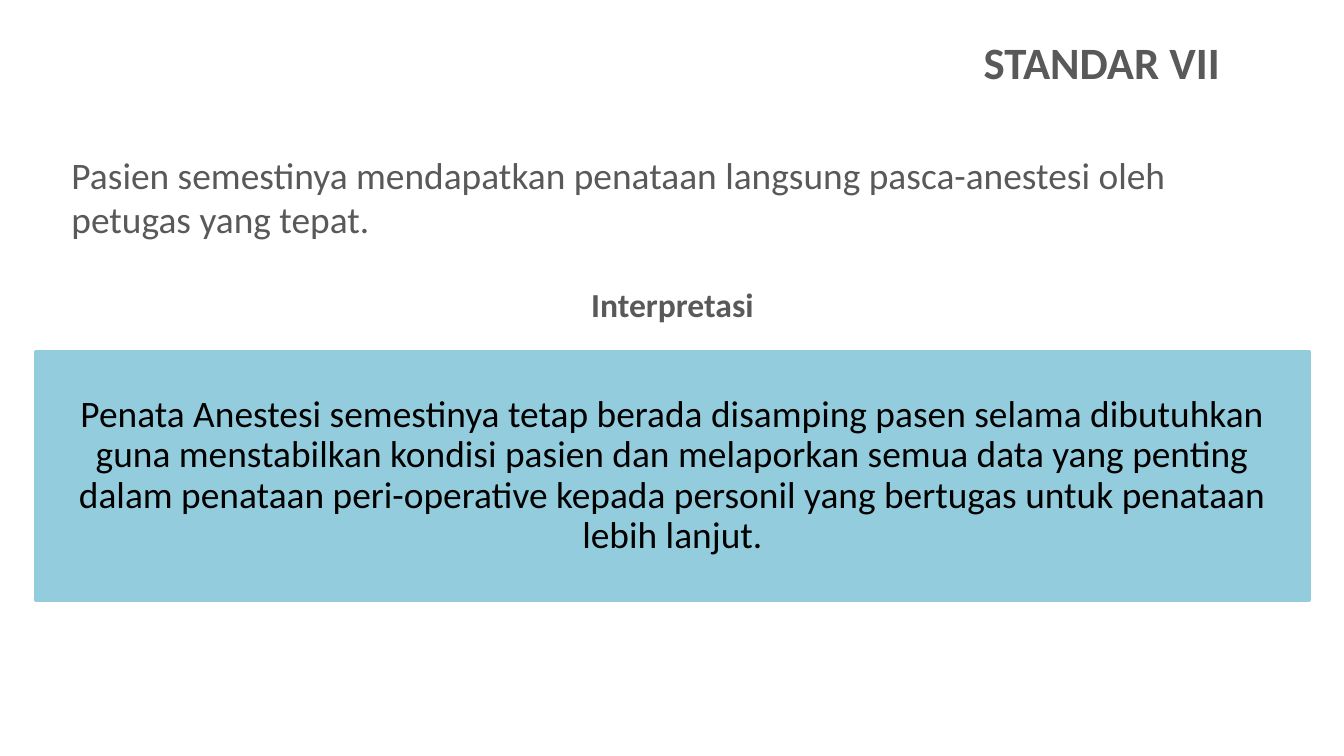
from dataclasses import dataclass

from lxml import etree
from pptx import Presentation
from pptx.dml.color import RGBColor
from pptx.enum.shapes import MSO_SHAPE
from pptx.enum.text import MSO_ANCHOR, MSO_AUTO_SIZE, PP_ALIGN
from pptx.oxml.ns import qn
from pptx.util import Pt

PX = 914400 / 134.4
RECT = MSO_SHAPE.RECTANGLE
TOP, MIDDLE = MSO_ANCHOR.TOP, MSO_ANCHOR.MIDDLE
LEFT, CENTER, RIGHT = PP_ALIGN.LEFT, PP_ALIGN.CENTER, PP_ALIGN.RIGHT
NO_FIT = MSO_AUTO_SIZE.NONE


def px(n):
    return round(n * PX)


@dataclass(frozen=True)
class Theme:
    font: str = "Calibri"
    grey: RGBColor = RGBColor(0x59, 0x59, 0x59)
    black: RGBColor = RGBColor(0, 0, 0)
    panel: RGBColor = RGBColor(0x93, 0xCD, 0xDD)
    heading: int = 24
    text: int = 20
    label: int = 18


class SlideBuilder:
    def __init__(self, slide, theme):
        self.slide = slide
        self.theme = theme

    def add_text(self, sp, text, size, color, align=LEFT, bold=False, anchor=TOP):
        tf = sp.text_frame
        tf.word_wrap = True
        tf.auto_size = NO_FIT
        tf.vertical_anchor = anchor
        p = tf.paragraphs[0]
        p.alignment = align
        p.space_before = Pt(0)
        r = p.add_run()
        r.text = text
        r.font.name = self.theme.font
        r.font.size = Pt(size)
        r.font.bold = bold
        r.font.color.rgb = color
        return p

    def place(self, sp, box):
        sp.left, sp.top, sp.width, sp.height = map(px, box)

    def title(self, box, text):
        sp = self.slide.shapes.title
        self.place(sp, box)
        self.add_text(sp, text, self.theme.text, self.theme.grey)

    def body(self, box, text):
        sp = self.slide.placeholders[1]
        self.place(sp, box)
        p = self.add_text(sp, text, self.theme.label, self.theme.grey, CENTER, bold=True)
        pPr = p._p.get_or_add_pPr()
        pPr.set("marL", "0")
        pPr.set("indent", "0")
        etree.SubElement(pPr, qn("a:buNone"))

    def heading(self, box, text):
        sp = self.slide.shapes.add_textbox(*map(px, box))
        self.add_text(sp, text, self.theme.heading, self.theme.grey, RIGHT, bold=True)

    def panel(self, box, text):
        sp = self.slide.shapes.add_shape(RECT, *map(px, box))
        sp.shadow.inherit = False
        sp.fill.solid()
        sp.fill.fore_color.rgb = self.theme.panel
        sp.line.color.rgb = self.theme.panel
        sp.line.width = Pt(2)
        tf = sp.text_frame
        tf.margin_left = tf.margin_right = tf.margin_top = tf.margin_bottom = px(11)
        p = self.add_text(sp, text, self.theme.text, self.theme.black, CENTER, anchor=MIDDLE)
        p.line_spacing = 0.9


def main():
    prs = Presentation()
    prs.slide_width, prs.slide_height = px(1344), px(756)
    s = SlideBuilder(prs.slides.add_slide(prs.slide_layouts[1]), Theme())

    # Standard and its statement
    s.title((58, 145, 1227, 159),
            "Pasien semestinya mendapatkan penataan langsung pasca-anestesi "
            "oleh petugas yang tepat.")
    s.heading((429, 28, 804, 70), "STANDAR VII")

    # Interpretation
    s.body((85, 277, 1175, 59), "Interpretasi")
    s.panel((36, 352, 1273, 248),
            "Penata Anestesi semestinya tetap berada disamping pasen selama "
            "dibutuhkan guna menstabilkan kondisi pasien dan melaporkan semua "
            "data yang penting dalam penataan peri-operative kepada personil "
            "yang bertugas untuk penataan lebih lanjut.")

    prs.save("out.pptx")


if __name__ == "__main__":
    main()
